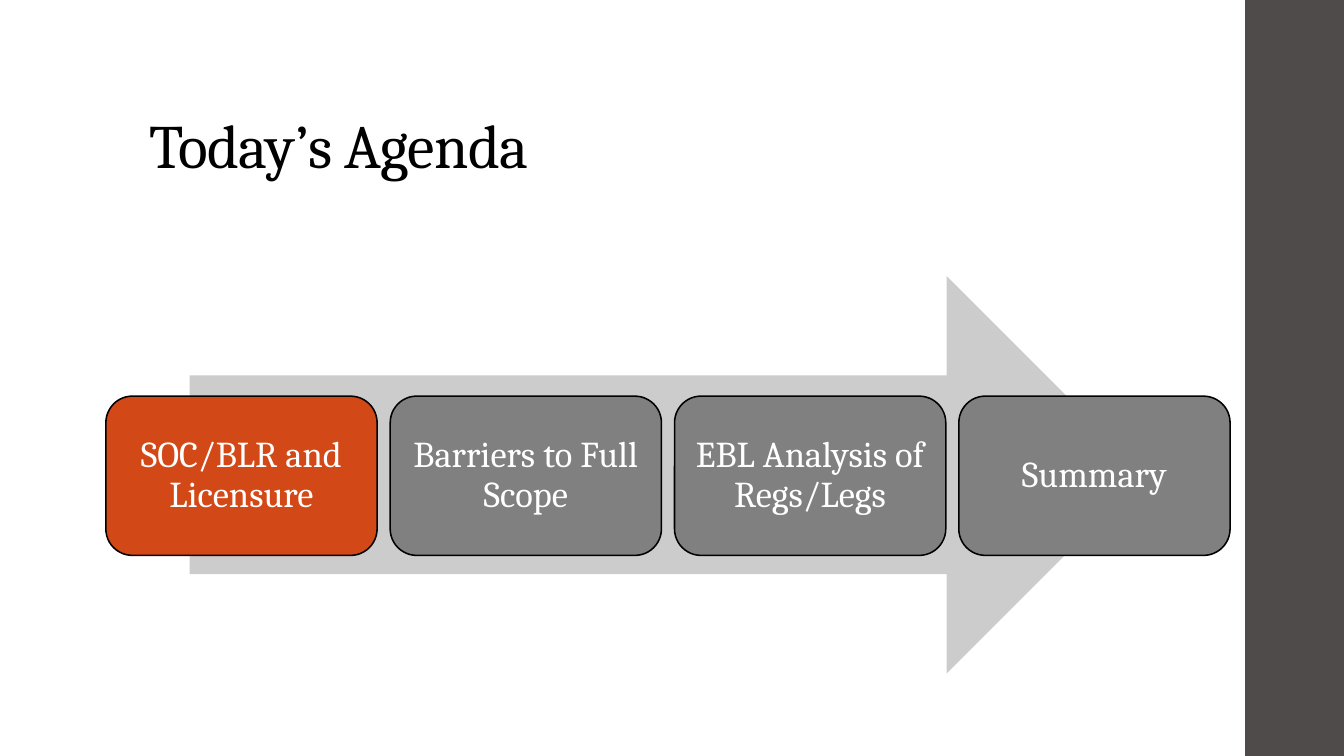
from pptx import Presentation
from pptx import util as u
from pptx.dml.color import RGBColor
from pptx.enum import shapes, text

COLORS = {
    "sidebar": "4F4B4B",
    "arrow": "CCCCCC",
    "current": "D34817",
    "upcoming": "808080",
    "title": "000000",
    "outline": "000000",
    "label": "FFFFFF",
}
TOPICS = [
    "SOC/BLR and Licensure",
    "Barriers to Full Scope",
    "EBL Analysis of Regs/Legs",
    "Summary",
]


def add_block(kind, left, top, width, height, color):
    sp = s.shapes.add_shape(
        kind, u.Inches(left), u.Inches(top), u.Inches(width), u.Inches(height)
    )
    sp.shadow.inherit = False
    sp.fill.solid()
    sp.fill.fore_color.rgb = RGBColor.from_string(COLORS[color])
    sp.line.fill.background()
    return sp


def write_text(tf, words, size, color, anchor, align):
    tf.word_wrap = True
    tf.vertical_anchor = anchor
    p = tf.paragraphs[0]
    p.alignment = align
    p.line_spacing = 0.9
    r = p.add_run()
    r.text = words
    p.font.name = "Cambria"
    p.font.size = u.Pt(size)
    p.font.color.rgb = RGBColor.from_string(COLORS[color])
    return r


prs = Presentation()
prs.slide_width = u.Inches(13.33)
prs.slide_height = u.Inches(7.5)
s = prs.slides.add_slide(prs.slide_layouts[6])

add_block(shapes.MSO_SHAPE.RECTANGLE, 12.35, 0, 0.98, 7.5, "sidebar")

title = s.shapes.add_textbox(
    u.Inches(1.38), u.Inches(0.4), u.Inches(10.6), u.Inches(1.45)
)
r = write_text(
    title.text_frame, "Today’s Agenda", 44, "title",
    text.MSO_ANCHOR.BOTTOM, text.PP_ALIGN.LEFT,
)
r.font._element.set("spc", "-50")

add_block(shapes.MSO_SHAPE.RIGHT_ARROW, 1.88, 2.74, 9.48, 3.94, "arrow")

for i, topic in enumerate(TOPICS):
    sp = add_block(
        shapes.MSO_SHAPE.ROUNDED_RECTANGLE, 1.05 + i * 2.82, 3.93, 2.69, 1.58,
        "current" if i == 0 else "upcoming",
    )
    sp.line.color.rgb = RGBColor.from_string(COLORS["outline"])
    sp.line.width = u.Pt(1.1)
    tf = sp.text_frame
    tf.margin_left = tf.margin_right = u.Inches(0.11)
    tf.margin_top = tf.margin_bottom = u.Inches(0.11)
    write_text(
        tf, topic, 26, "label", text.MSO_ANCHOR.MIDDLE, text.PP_ALIGN.CENTER
    )

prs.save("out.pptx")
